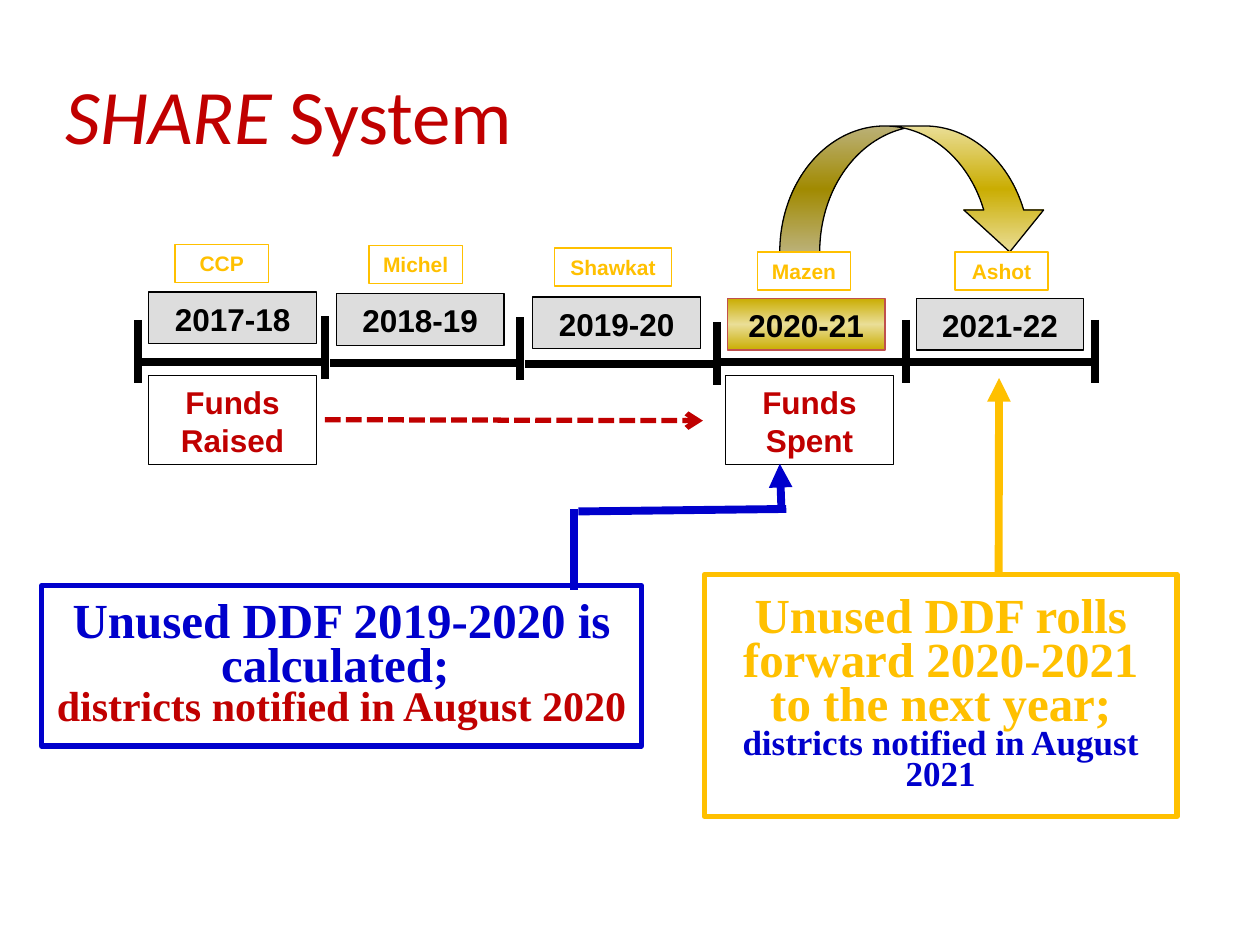
"""Build the SHARE System funding timeline slide."""
import copy

import pptx
import pptx.dml.color
import pptx.enum.dml
import pptx.enum.shapes
import pptx.enum.text
import pptx.oxml
import pptx.oxml.ns
import pptx.util

Cm, Pt = pptx.util.Cm, pptx.util.Pt
RGBColor = pptx.dml.color.RGBColor
SHAPE = pptx.enum.shapes.MSO_SHAPE
ANCHOR = pptx.enum.text.MSO_ANCHOR
qn = pptx.oxml.ns.qn

BLACK = RGBColor(0x00, 0x00, 0x00)
WHITE = RGBColor(0xFF, 0xFF, 0xFF)
GREY = RGBColor(0xDD, 0xDD, 0xDD)
RED = RGBColor(0xC0, 0x00, 0x00)
BRICK = RGBColor(0xC0, 0x50, 0x4D)
BLUE = RGBColor(0x00, 0x00, 0xCC)
AMBER = RGBColor(0xFF, 0xC0, 0x00)
GOLD = RGBColor(0xCA, 0xAD, 0x02)
PALE_GOLD = RGBColor(0xEA, 0xDE, 0x97)

YEAR = {"name": "Arial", "size": Pt(18), "bold": True, "color": BLACK}
FUNDS = {**YEAR, "color": RED}
LEADER = {**YEAR, "size": Pt(12), "color": AMBER}
NOTICE = {"name": "Times New Roman", "size": Pt(28), "bold": True, "color": BLUE}
TITLE = {"name": "Calibri", "size": Pt(44), "color": RED}

deck = pptx.Presentation()
deck.slide_width, deck.slide_height = Cm(25.4), Cm(19.05)
slide = deck.slides.add_slide(deck.slide_layouts[6])


def add_box(place, paragraphs, fill, line, width=0.75, anchor=ANCHOR.MIDDLE,
            preset=SHAPE.RECTANGLE, align=pptx.enum.text.PP_ALIGN.CENTER, spacing=None):
    box = slide.shapes.add_shape(preset, *map(Cm, place))
    box.shadow.inherit = False
    if isinstance(fill, tuple) and not isinstance(fill, RGBColor):
        box.fill.gradient()
        box.fill.gradient_angle = 90
        stop_list = box._element.spPr.find(".//" + qn("a:gsLst"))
        stop_list.insert(1, copy.deepcopy(stop_list[0]))
        for stop, color, position in zip(box.fill.gradient_stops, fill, (0, 0.5, 1)):
            stop.color.rgb, stop.position = color, position
    elif fill is None:
        box.fill.background()
    else:
        box.fill.solid()
        box.fill.fore_color.rgb = fill
    if line is None:
        box.line.fill.background()
    else:
        box.line.color.rgb, box.line.width = line, Pt(width)
    frame = box.text_frame
    frame.word_wrap, frame.vertical_anchor = True, anchor
    for index, runs in enumerate(paragraphs):
        paragraph = frame.add_paragraph() if index else frame.paragraphs[0]
        paragraph.alignment = align
        paragraph.line_spacing = spacing
        for text, style in runs:
            run = paragraph.add_run()
            run.text = text
            for attribute, value in style.items():
                if attribute == "color":
                    run.font.color.rgb = value
                else:
                    setattr(run.font, attribute, value)
    return box


def add_line(x1, y1, x2, y2, color, width=4.5, head=None, dash=None):
    connector = slide.shapes.add_connector(
        pptx.enum.shapes.MSO_CONNECTOR.STRAIGHT, Cm(x1), Cm(y1), Cm(x2), Cm(y2))
    connector.line.color.rgb, connector.line.width = color, Pt(width)
    if dash:
        connector.line.dash_style = dash
    if head:
        tail = pptx.oxml.ns.nsdecls("a")
        connector.line._get_or_add_ln().append(
            pptx.oxml.parse_xml(f'<a:tailEnd {tail} type="{head}"/>'))
    connector._element.spPr.append(
        pptx.oxml.parse_xml(f'<a:effectLst {pptx.oxml.ns.nsdecls("a")}/>'))


add_box((1.07, 0.64, 24.33, 3.3),
        [[("SHARE ", {**TITLE, "italic": True}), ("System", TITLE)]],
        None, None, align=pptx.enum.text.PP_ALIGN.LEFT)

for left, top in ((2.79, 7.29), (6.65, 7.32), (10.59, 7.34), (14.45, 7.29), (18.26, 7.29)):
    add_line(left, top, left + 3.78, top, BLACK)
for left, top in ((2.79, 6.45), (6.55, 6.38), (10.49, 6.4),
                  (14.45, 6.5), (18.26, 6.45), (22.07, 6.45)):
    add_line(left, top, left, top + 1.27, BLACK)

rollover = add_box((15.72, 2.54, 5.44, 2.54), [], (PALE_GOLD, GOLD, PALE_GOLD), BLACK,
                   preset=SHAPE.CURVED_DOWN_ARROW)
for index, ratio in enumerate((0.317, 0.633, 0.333)):
    rollover.adjustments[index] = ratio

plain_year = (3.38, GREY, BLACK)
spending_year = (3.18, (GOLD, PALE_GOLD, GOLD), BRICK)
for year, left, top, (width, fill, line) in (
        ("2017-18", 3.0, 5.89, plain_year),
        ("2018-19", 6.78, 5.92, plain_year),
        ("2019-20", 10.74, 5.99, plain_year),
        ("2020-21", 14.66, 6.02, spending_year),
        ("2021-22", 18.47, 6.02, plain_year)):
    add_box((left, top, width, 1.04), [[(year, YEAR)]], fill, line, anchor=ANCHOR.BOTTOM)

for leader, left, top, width in (
        ("CCP", 3.53, 4.93, 1.88),
        ("Michel", 7.44, 4.95, 1.88),
        ("Shawkat", 11.18, 5.0, 2.36),
        ("Mazen", 15.27, 5.08, 1.88),
        ("Ashot", 19.25, 5.08, 1.88)):
    add_box((left, top, width, 0.77), [[(leader, LEADER)]], None, AMBER, anchor=ANCHOR.TOP)

for stage, left in (("Funds Raised", 3.0), ("Funds Spent", 14.63)):
    add_box((left, 7.57, 3.38, 1.8), [[(stage, FUNDS)]], WHITE, BLACK, anchor=ANCHOR.BOTTOM)
add_line(6.55, 8.46, 14.17, 8.48, RED, 3, "arrow", pptx.enum.dml.MSO_LINE.SQUARE_DOT)

add_box((0.84, 11.81, 12.09, 3.23),
        [[("Unused DDF 2019-2020 is calculated; ", NOTICE)],
         [("districts notified in August 2020", {**NOTICE, "size": Pt(24), "color": RED})]],
        None, BLUE, 3, spacing=0.75)
add_line(11.58, 10.26, 11.58, 11.89, BLUE)
add_line(11.66, 10.31, 15.85, 10.26, BLUE)
add_line(15.75, 10.19, 15.72, 9.35, BLUE, head="triangle")

add_line(20.12, 16.48, 20.14, 7.62, AMBER, head="triangle")
amber_notice = {**NOTICE, "color": AMBER}
add_box((14.2, 11.58, 9.53, 4.88),
        [[("Unused DDF rolls forward 2020-2021", amber_notice)],
         [("to the next year; ", amber_notice),
          ("districts notified in August 2021", {**NOTICE, "size": Pt(20)})]],
        WHITE, AMBER, 3, spacing=0.75)

deck.save("out.pptx")
